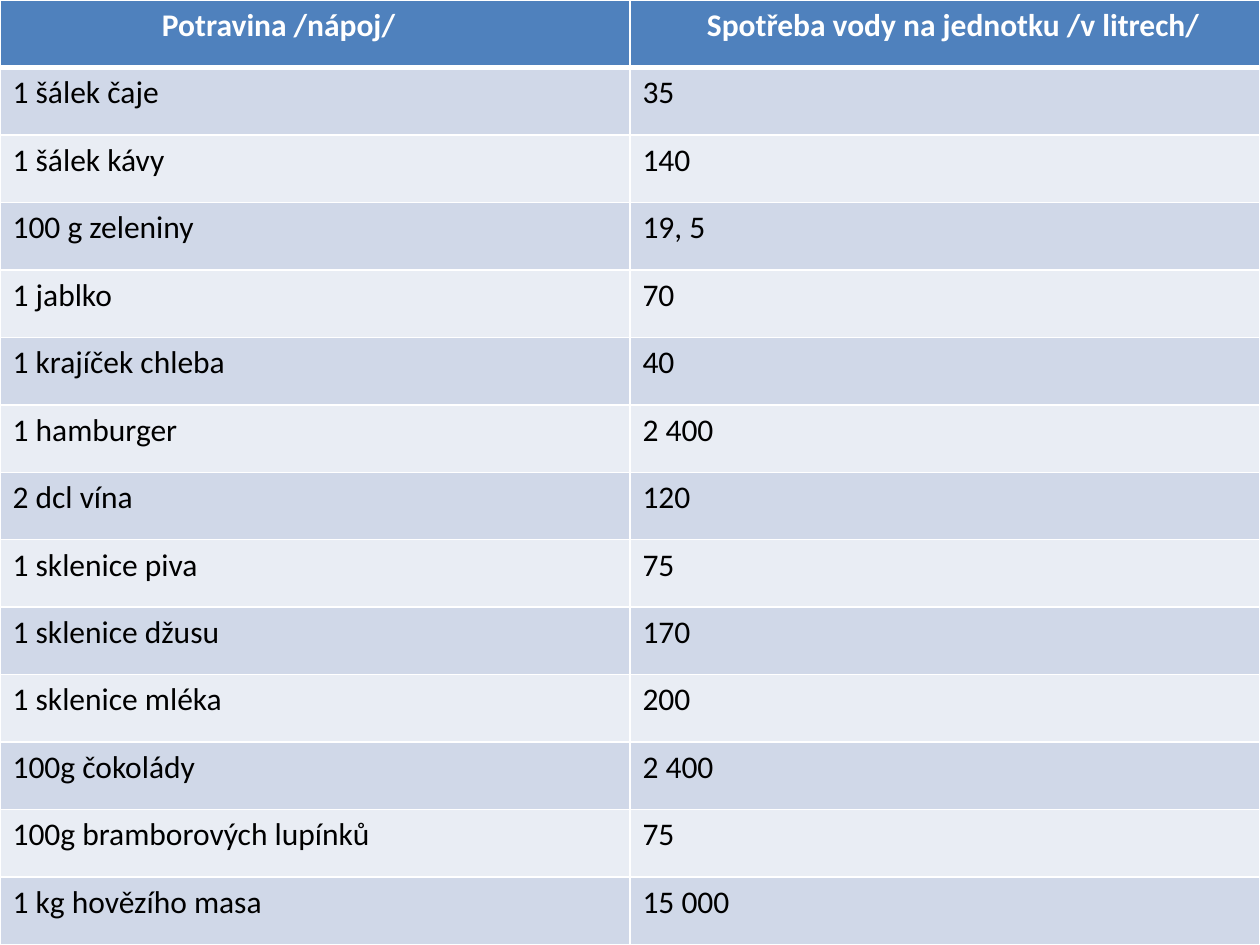
import pptx
import pptx.util
import pptx.dml.color
import pptx.oxml
import pptx.oxml.ns

RGB = pptx.dml.color.RGBColor
WHITE = RGB(0xFF, 0xFF, 0xFF)
BLACK = RGB(0x00, 0x00, 0x00)
BLUE = RGB(0x4F, 0x81, 0xBD)
DARK = RGB(0xD0, 0xD8, 0xE8)
LIGHT = RGB(0xE9, 0xED, 0xF4)

PX = 914400 // 126
WIDE, HIGH = 1260 * PX, 945 * PX


def edge(cell, side, width):
    """Draw one white cell border; width in points."""
    cell._tc.get_or_add_tcPr().append(pptx.oxml.parse_xml(
        f'<a:{side} {pptx.oxml.ns.nsdecls("a")} w="{pptx.util.Pt(width)}">'
        f'<a:solidFill><a:srgbClr val="{WHITE}"/></a:solidFill></a:{side}>'))


rows = [
    ("Potravina /nápoj/", "Spotřeba vody na jednotku /v litrech/"),
    ("1 šálek čaje", "35"),
    ("1 šálek kávy", "140"),
    ("100 g zeleniny", "19, 5"),
    ("1 jablko", "70"),
    ("1 krajíček chleba", "40"),
    ("1 hamburger", "2 400"),
    ("2 dcl vína", "120"),
    ("1 sklenice piva", "75"),
    ("1 sklenice džusu", "170"),
    ("1 sklenice mléka", "200"),
    ("100g čokolády", "2 400"),
    ("100g bramborových lupínků", "75"),
    ("1 kg hovězího masa", "15 000"),
]
indents = (162 * PX, 77 * PX)  # left margins of the header cells

# Slide
deck = pptx.Presentation()
deck.slide_width, deck.slide_height = WIDE, HIGH
slide = deck.slides.add_slide(deck.slide_layouts[6])

# Table over the whole slide
table = slide.shapes.add_table(len(rows), 2, 0, 0, WIDE, HIGH).table
for r, row in enumerate(rows):
    head = r == 0
    for c, text in enumerate(row):
        cell = table.cell(r, c)
        cell.text = text
        if head:
            cell.margin_left = indents[c]

        # Borders, with a thick rule under the header
        for side in ("lnL", "lnR", "lnT", "lnB"):
            thick = (r, side) in ((0, "lnB"), (1, "lnT"))
            edge(cell, side, 3 if thick else 1)

        # Banded fill
        cell.fill.solid()
        cell.fill.fore_color.rgb = BLUE if head else DARK if r % 2 else LIGHT

        # Text
        font = cell.text_frame.paragraphs[0].font
        font.name = "Calibri"
        font.size = pptx.util.Pt(18)
        font.bold = head
        font.color.rgb = WHITE if head else BLACK

deck.save("out.pptx")
